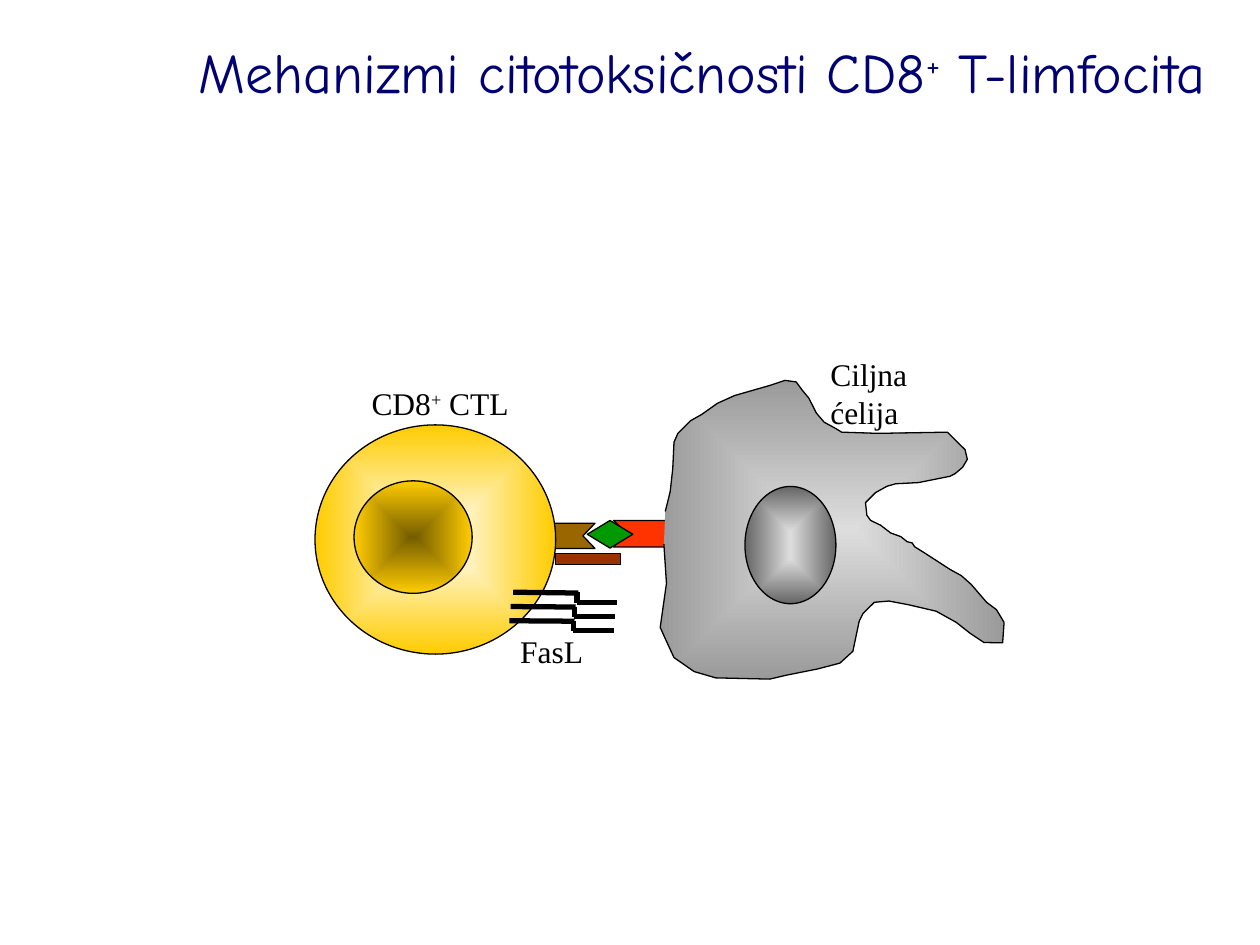
from lxml import etree
from pptx import Presentation
from pptx.dml.color import RGBColor
from pptx.enum import shapes, text
from pptx.oxml.ns import qn
from pptx.util import Pt

COLORS = {
    "black": "000000", "white": "FFFFFF", "title": "000072",
    "receptor": "996600", "coreceptor": "993300", "mhc": "FF3300", "peptide": "009900",
    "yellow": "FFCC00", "dark yellow": "765E00",
    "light gray": "DDDDDD", "gray": "9A9A9A", "dark gray": "666666",
}
SERIF, HAND = "Times New Roman", "Comic Neue"
SHAPE = shapes.MSO_SHAPE

TARGET_CELL_OUTLINE = [
    (380.2, 292.3), (383, 281), (384.5, 267.8), (385.2, 252.7), (387.4, 247.7),
    (394.6, 240.5), (401, 236.9), (410, 230.5), (419.8, 226.1), (439.9, 220.3),
    (448.6, 217.4), (455, 218.3), (458.6, 223.2), (462.2, 227.5), (466.5, 236),
    (471, 241.3), (477.4, 244.8), (481, 247), (501.8, 247.7), (541.4, 247),
    (551.5, 257), (552.8, 262.5), (550.1, 267.1), (545.8, 270.7), (542.9, 272.2),
    (524.9, 275.8), (511.9, 276.5), (506.9, 277.9), (500.4, 281.5), (494.6, 287.3),
    (495.4, 294.5), (497.5, 297.4), (503.3, 300.2), (509, 304.6), (514.8, 306.7),
    (518.4, 309.6), (521.3, 310.3), (522.7, 312.5), (528.5, 316.1), (542.9, 325.4),
    (549.4, 329), (555.1, 334.1), (563.8, 344.2), (569.5, 348.5), (573.8, 355.7),
    (573, 367.4), (562.3, 367.2), (554.5, 362), (546.5, 355.7), (535, 349.3),
    (519.1, 345.6), (508, 343.5), (499.7, 344.2), (493.2, 350.6), (491, 355),
    (487.4, 372.2), (480, 379), (467.3, 382.3), (449.3, 385.9), (439.9, 388.1),
    (409, 387.4), (396.7, 383.8), (385.2, 375.8), (380.2, 365), (377.3, 358.6),
    (380.9, 333.4), (379.4, 311),
]


def rgb(name):
    return RGBColor.from_string(COLORS[name])


def style(shape, fill, line="black"):
    shape.shadow.inherit = False
    shape.fill.solid()
    shape.fill.fore_color.rgb = rgb(fill)
    if line:
        shape.line.color.rgb = rgb(line)
        shape.line.width = Pt(0.75)
    else:
        shape.line.fill.background()


def fill_from_center(shape, inner, outer, kind="shape"):
    """Gradient that spreads from the middle of the shape to its edge."""
    shape.fill.gradient()
    for stop, position, color in zip(shape.fill.gradient_stops, (0, 1), (inner, outer)):
        stop.position = position
        stop.color.rgb = rgb(color)
    gradient = shape._element.spPr.find(qn("a:gradFill"))
    gradient.remove(gradient.find(qn("a:lin")))
    center = etree.SubElement(gradient, qn("a:path"))
    center.set("path", kind)
    focus = etree.SubElement(center, qn("a:fillToRect"))
    for side in "ltrb":
        focus.set(side, "50000")


def add_preset(container, preset, box, fill, line="black", rotation=0, adjustment=None):
    shape = container.add_shape(preset, *map(Pt, box))
    style(shape, fill, line)
    shape.rotation = rotation
    if adjustment is not None:
        shape.adjustments[0] = adjustment
    return shape


def add_ellipse(slide, box, inner, outer):
    fill_from_center(add_preset(slide.shapes, SHAPE.OVAL, box, outer), inner, outer)


def add_target_cell(slide):
    start, *rest = [(Pt(x), Pt(y)) for x, y in TARGET_CELL_OUTLINE]
    builder = slide.shapes.build_freeform(*start)
    builder.add_line_segments(rest, close=False)
    cell = builder.convert_to_shape()
    style(cell, "gray")
    fill_from_center(cell, "light gray", "gray", kind="rect")


def add_line(slide, start, end):
    line = slide.shapes.add_connector(
        shapes.MSO_CONNECTOR.STRAIGHT, *map(Pt, (*start, *end)))
    line.line.color.rgb = rgb("black")
    line.line.width = Pt(3)
    etree.SubElement(line._element.spPr, qn("a:effectLst"))


def add_ligand(slide, x, y, slope):
    """Stepped line whose step stands at x, y."""
    add_line(slide, (x - 36.5, y - slope), (x + 0.7, y))
    add_line(slide, (x, y - slope), (x, y + 5.8))
    add_line(slide, (x, y + 5.3), (x + 23, y + 5.3))


def write_text(shape, content, font=SERIF, size=18, color="black",
               align=text.PP_ALIGN.LEFT, side_inset=7.2):
    """Write the text; each part between ^ marks at an odd place is superscript."""
    frame = shape.text_frame
    frame.word_wrap = True
    frame.auto_size = text.MSO_AUTO_SIZE.SHAPE_TO_FIT_TEXT
    frame.vertical_anchor = text.MSO_ANCHOR.TOP
    frame.margin_left = frame.margin_right = Pt(side_inset)
    paragraph = frame.paragraphs[0]
    paragraph.alignment = align
    for index, part in enumerate(content.split("^")):
        run = paragraph.add_run()
        run.text = part
        run.font.name = font
        run.font.size = Pt(size)
        run.font.color.rgb = rgb(color)
        if index % 2:
            run._r.get_or_add_rPr().set("baseline", "30000")


def add_label(slide, box, content, **text_format):
    write_text(slide.shapes.add_textbox(*map(Pt, box)), content, **text_format)


def add_receptor_complex(slide):
    parts = slide.shapes.add_group_shape().shapes
    add_preset(parts, SHAPE.CHEVRON, (308.5, 299, 31.5, 14.4), "receptor",
               rotation=180, adjustment=0.48)
    add_preset(parts, SHAPE.RECTANGLE, (317.3, 316.2, 37.2, 6.4), "coreceptor")
    add_preset(parts, SHAPE.CHEVRON, (350.6, 297.4, 38.2, 15.1), "mhc", adjustment=0.53)
    add_preset(parts, SHAPE.DIAMOND, (335.6, 297.4, 26, 15.8), "peptide")


def main():
    presentation = Presentation()
    presentation.slide_width, presentation.slide_height = Pt(720), Pt(540)
    slide = presentation.slides.add_slide(presentation.slide_layouts[6])

    add_receptor_complex(slide)
    add_ellipse(slide, (180, 242.8, 137.5, 131), "white", "yellow")
    add_ellipse(slide, (202.3, 274.8, 67.5, 64.3), "dark yellow", "yellow")
    add_target_cell(slide)
    add_ellipse(slide, (425.7, 278, 52, 67), "light gray", "dark gray")
    add_label(slide, (467.4, 199.3, 100, 50.4), "Ciljna ćelija")

    add_ligand(slide, 329.8, 338.9, slope=0.5)
    add_ligand(slide, 328.3, 346.9, slope=0.3)
    add_ligand(slide, 327.6, 355, slope=0.3)
    add_label(slide, (297.2, 357.7, 53.3, 28.8), "FasL", side_inset=0)
    add_label(slide, (205.2, 216, 106, 28.8), "CD8^+^ CTL")

    title = add_preset(slide.shapes, SHAPE.RECTANGLE, (24, 18, 672, 46), "white", line=None)
    write_text(title, "Mehanizmi citotoksičnosti CD8^+^ T-limfocita", font=HAND,
               size=32, color="title", align=text.PP_ALIGN.RIGHT)

    presentation.save("out.pptx")


if __name__ == "__main__":
    main()
